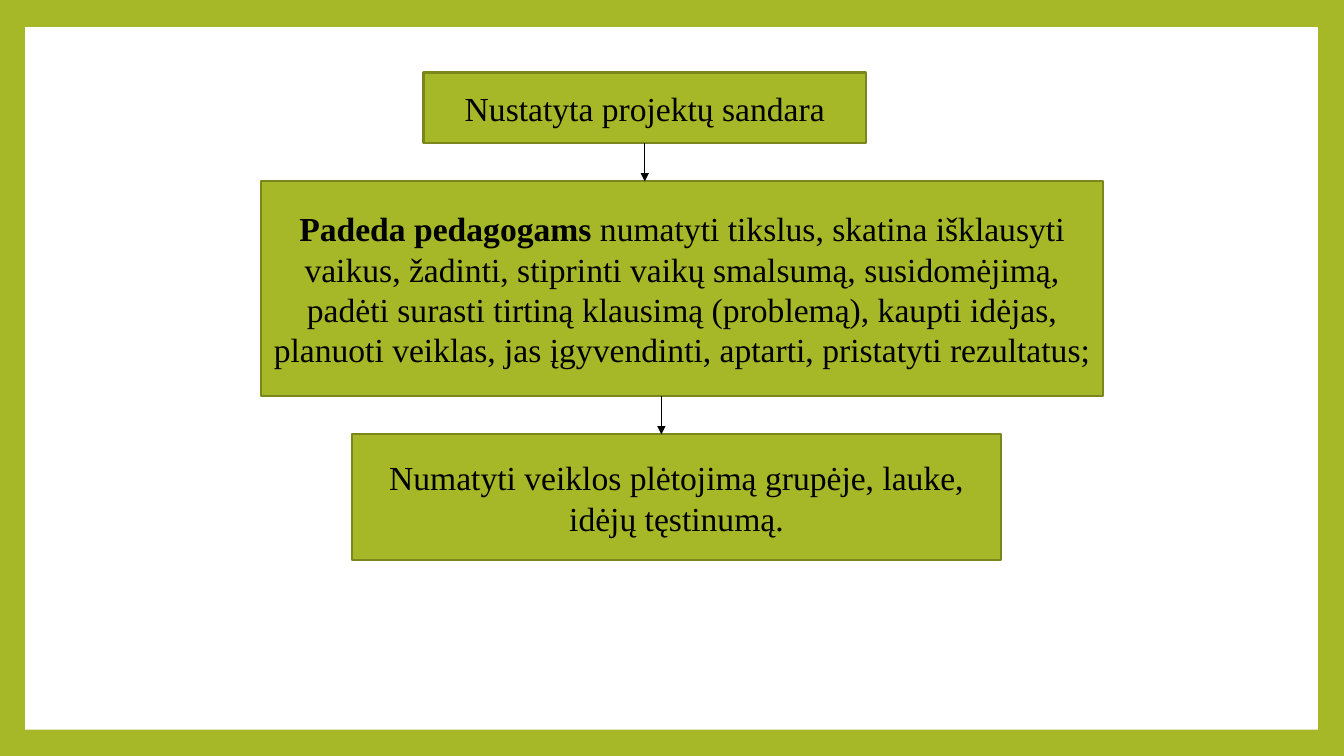
from dataclasses import dataclass

from lxml.etree import SubElement
from pptx import Presentation
from pptx.dml.color import RGBColor as Rgb
from pptx.enum.shapes import MSO_CONNECTOR as Link, MSO_SHAPE as Form
from pptx.enum.text import MSO_ANCHOR as Anchor, PP_ALIGN as Align
from pptx.oxml.ns import qn
from pptx.util import Inches, Pt


@dataclass(frozen=True)
class Theme:
    green: Rgb = Rgb.from_string("A6B727")
    edge: Rgb = Rgb.from_string("7B871D")
    white: Rgb = Rgb.from_string("FFFFFF")
    black: Rgb = Rgb.from_string("000000")
    font: str = "Times New Roman"
    size: Pt = Pt(24)
    rim: Pt = Pt(1.5)
    thin: Pt = Pt(0.79)


theme = Theme()
deck = Presentation()
deck.slide_width = Inches(13.33)
deck.slide_height = Inches(7.5)
col = deck.slide_width / 1333
row = deck.slide_height / 750
slide = deck.slides.add_slide(deck.slide_layouts[6])
slide.background.fill.solid()
slide.background.fill.fore_color.rgb = theme.green


def add_box(left, top, wide, high, fill):
    box = slide.shapes.add_shape(
        Form.RECTANGLE, round(left * col), round(top * row),
        round(wide * col), round(high * row))
    box.shadow.inherit = False
    box.fill.solid()
    box.fill.fore_color.rgb = fill
    return box


panel = add_box(25, 27, 1282, 697, theme.white)
panel.line.fill.background()

steps = [
    (420, 72, 439, 70, [("Nustatyta projektų sandara", False)]),
    (259, 180, 835, 213, [
        ("Padeda pedagogams ", True),
        ("numatyti tikslus, skatina išklausyti vaikus, žadinti, stiprinti "
         "vaikų smalsumą, susidomėjimą, padėti surasti tirtiną klausimą "
         "(problemą), kaupti idėjas, planuoti veiklas, jas įgyvendinti, "
         "aptarti, pristatyti rezultatus;", False)]),
    (349, 431, 644, 125, [
        ("Numatyti veiklos plėtojimą grupėje, lauke, idėjų tęstinumą.", False)]),
]
boxes = []
for left, top, wide, high, runs in steps:
    box = add_box(left, top, wide, high, theme.green)
    box.line.color.rgb = theme.edge
    box.line.width = theme.rim
    frame = box.text_frame
    frame.word_wrap = True
    frame.vertical_anchor = Anchor.MIDDLE
    para = frame.paragraphs[0]
    para.alignment = Align.CENTER
    for text, bold in runs:
        run = para.add_run()
        run.text = text
        run.font.name = theme.font
        run.font.size = theme.size
        run.font.bold = bold
        run.font.color.rgb = theme.black
    boxes.append(box)

arrows = []
for mid, start, end in zip((639.5, 656), boxes, boxes[1:]):
    x = round(mid * col)
    arrow = slide.shapes.add_connector(
        Link.STRAIGHT, x, start.top + start.height, x, end.top)
    arrow.line.color.rgb = theme.black
    arrow.line.width = theme.thin
    SubElement(arrow.line._get_or_add_ln(), qn("a:tailEnd"), type="triangle")
    SubElement(arrow._element.spPr, qn("a:effectLst"))
    arrows.append(arrow)
arrows[0].begin_connect(boxes[0], 2)

deck.save("out.pptx")
